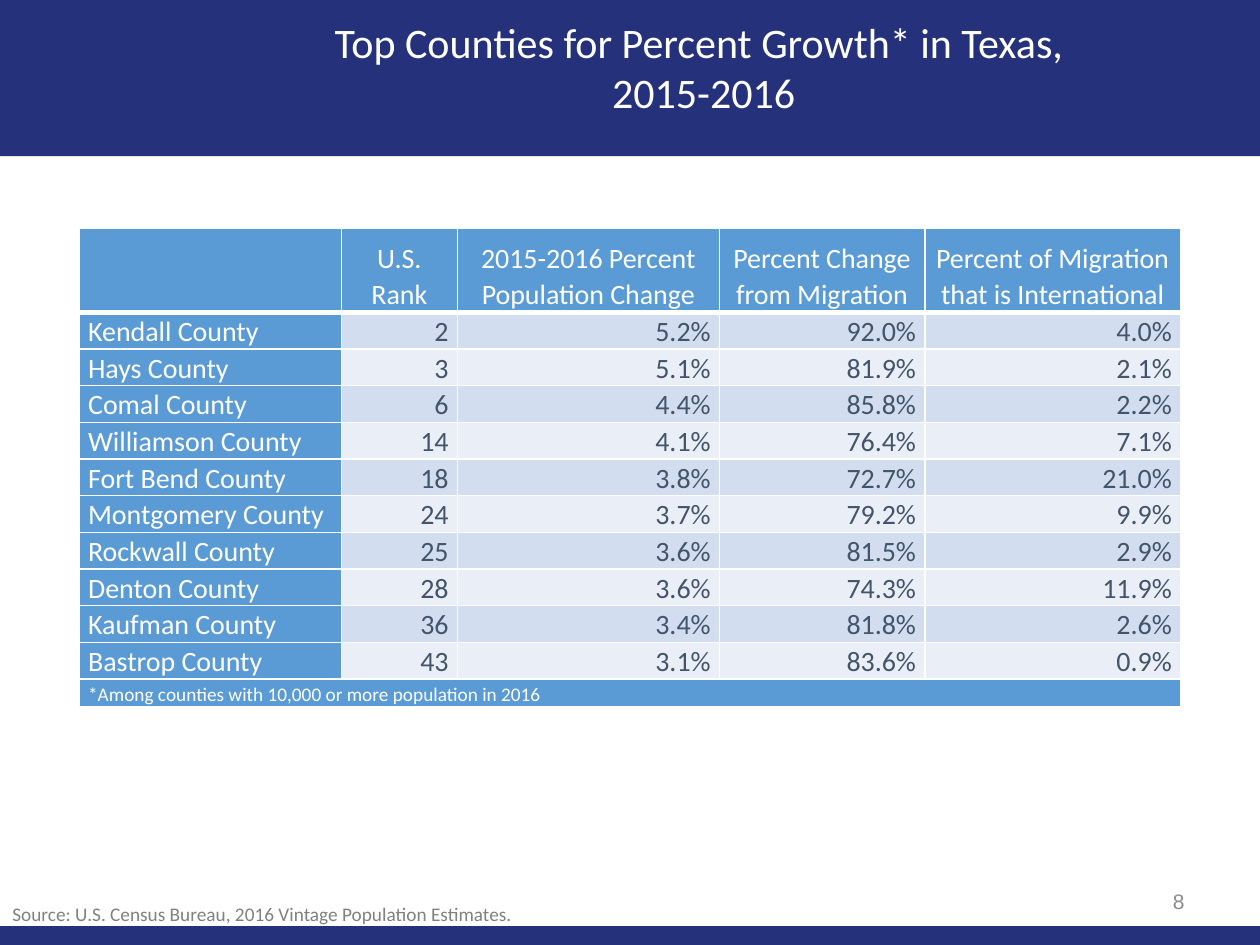
import pptx
import pptx.dml.color
import pptx.enum.shapes
import pptx.enum.text
import pptx.oxml
import pptx.oxml.ns
import pptx.util

Inches = pptx.util.Inches
Pt = pptx.util.Pt
ALIGN = pptx.enum.text.PP_ALIGN
ANCHOR = pptx.enum.text.MSO_ANCHOR

WIDTH, HEIGHT = 10, 7.5
NAVY, BLUE, WHITE, SLATE = "25327B", "5B9BD5", "FFFFFF", "44546A"
BANDS = "D2DEEF", "EAEFF7"

COLUMN_WIDTHS = [2.08, 0.92, 2.08, 1.63, 2.03]
HEADER_HEIGHT, COUNTY_HEIGHT, NOTE_HEIGHT = 0.67, 0.29, 0.22
HEADINGS = [
    "",
    "U.S. Rank",
    "2015-2016 Percent Population Change",
    "Percent Change from Migration",
    "Percent of Migration that is International",
]
COUNTIES = [
    ("Kendall County", "2", "5.2%", "92.0%", "4.0%"),
    ("Hays County", "3", "5.1%", "81.9%", "2.1%"),
    ("Comal County", "6", "4.4%", "85.8%", "2.2%"),
    ("Williamson County", "14", "4.1%", "76.4%", "7.1%"),
    ("Fort Bend County", "18", "3.8%", "72.7%", "21.0%"),
    ("Montgomery County", "24", "3.7%", "79.2%", "9.9%"),
    ("Rockwall County", "25", "3.6%", "81.5%", "2.9%"),
    ("Denton County", "28", "3.6%", "74.3%", "11.9%"),
    ("Kaufman County", "36", "3.4%", "81.8%", "2.6%"),
    ("Bastrop County", "43", "3.1%", "83.6%", "0.9%"),
]
NOTE = "*Among counties with 10,000 or more population in 2016"


def color(value):
    return pptx.dml.color.RGBColor.from_string(value)


def add_span(para, text, size, ink, font="Calibri"):
    span = para.add_run()
    span.text = text
    span.font.size = Pt(size)
    span.font.name = font
    span.font.color.rgb = color(ink)


def add_band(page, top, height):
    band = page.shapes.add_shape(
        pptx.enum.shapes.MSO_SHAPE.RECTANGLE,
        0, Inches(top), Inches(WIDTH), Inches(height))
    band.shadow.inherit = False
    band.fill.solid()
    band.fill.fore_color.rgb = color(NAVY)
    band.line.fill.background()


def place_title(page, left, top, width, height, lines):
    title = page.shapes.title
    title.left, title.top = Inches(left), Inches(top)
    title.width, title.height = Inches(width), Inches(height)
    page.shapes._spTree.append(title._element)  # in front of the bands
    frame = title.text_frame
    frame.vertical_anchor = ANCHOR.TOP
    for index, line in enumerate(lines):
        para = frame.add_paragraph() if index else frame.paragraphs[0]
        para.alignment = ALIGN.CENTER
        add_span(para, line, 24, WHITE)


def set_borders(cell, top=1, bottom=1):
    """Draw white borders; call before filling, as the schema puts lines first."""
    properties = cell._tc.get_or_add_tcPr()
    for side, width in (("L", 1), ("R", 1), ("T", top), ("B", bottom)):
        properties.append(pptx.oxml.parse_xml(
            f'<a:ln{side} {pptx.oxml.ns.nsdecls("a")} w="{Pt(width)}">'
            f'<a:solidFill><a:srgbClr val="{WHITE}"/></a:solidFill></a:ln{side}>'))


def format_cell(cell, text, fill, align=ALIGN.LEFT, ink=WHITE, size=16,
                top=1, bottom=1):
    set_borders(cell, top, bottom)
    cell.fill.solid()
    cell.fill.fore_color.rgb = color(fill)
    cell.vertical_anchor = ANCHOR.BOTTOM
    cell.margin_left = cell.margin_right = Inches(0.07)
    cell.margin_top = cell.margin_bottom = 0
    para = cell.text_frame.paragraphs[0]
    para.alignment = align
    para.line_spacing = 1.07
    if text:
        add_span(para, text, size, ink)


def add_county_table(page, left, top):
    heights = [HEADER_HEIGHT] + [COUNTY_HEIGHT] * len(COUNTIES) + [NOTE_HEIGHT]
    table = page.shapes.add_table(
        len(heights), len(COLUMN_WIDTHS), Inches(left), Inches(top),
        Inches(sum(COLUMN_WIDTHS)), Inches(sum(heights))).table
    for column, width in zip(table.columns, COLUMN_WIDTHS):
        column.width = Inches(width)
    for row, height in zip(table.rows, heights):
        row.height = Inches(height)

    for column, heading in enumerate(HEADINGS):
        format_cell(table.cell(0, column), heading, BLUE, ALIGN.CENTER, bottom=3)
    for row, (county, *figures) in enumerate(COUNTIES, start=1):
        rule = 3 if row == 1 else 1
        format_cell(table.cell(row, 0), county, BLUE, top=rule)
        for column, figure in enumerate(figures, start=1):
            format_cell(table.cell(row, column), figure, BANDS[(row - 1) % 2],
                        ALIGN.RIGHT, SLATE, top=rule)
    last = len(heights) - 1
    note = table.cell(last, 0)
    note.merge(table.cell(last, len(COLUMN_WIDTHS) - 1))
    format_cell(note, NOTE, BLUE, size=11)


def add_label(page, left, top, width, height, text, size, ink, font="Calibri",
              align=ALIGN.LEFT, anchor=ANCHOR.TOP, wrap=True):
    box = page.shapes.add_textbox(
        Inches(left), Inches(top), Inches(width), Inches(height))
    frame = box.text_frame
    frame.word_wrap = wrap
    frame.vertical_anchor = anchor
    para = frame.paragraphs[0]
    para.alignment = align
    add_span(para, text, size, ink, font)


def main():
    deck = pptx.Presentation()
    deck.slide_width, deck.slide_height = Inches(WIDTH), Inches(HEIGHT)
    page = deck.slides.add_slide(deck.slide_layouts.get_by_name("Title Only"))
    add_band(page, 0, 1.24)
    add_band(page, HEIGHT - 0.15, 0.15)
    place_title(page, 1.92, 0.08, 7.33, 0.91,
                ["Top Counties for Percent Growth* in Texas, ", "2015-2016"])
    add_county_table(page, 0.63, 1.81)
    add_label(page, 7.17, 6.95, 2.33, 0.4, "8", 12, "8C8C8C", "Arial",
              ALIGN.RIGHT, ANCHOR.MIDDLE)
    add_label(page, 0, 7.11, 4.24, 0.29,
              "Source: U.S. Census Bureau, 2016 Vintage Population Estimates.",
              11, "808080", wrap=False)
    deck.save("out.pptx")


if __name__ == "__main__":
    main()
